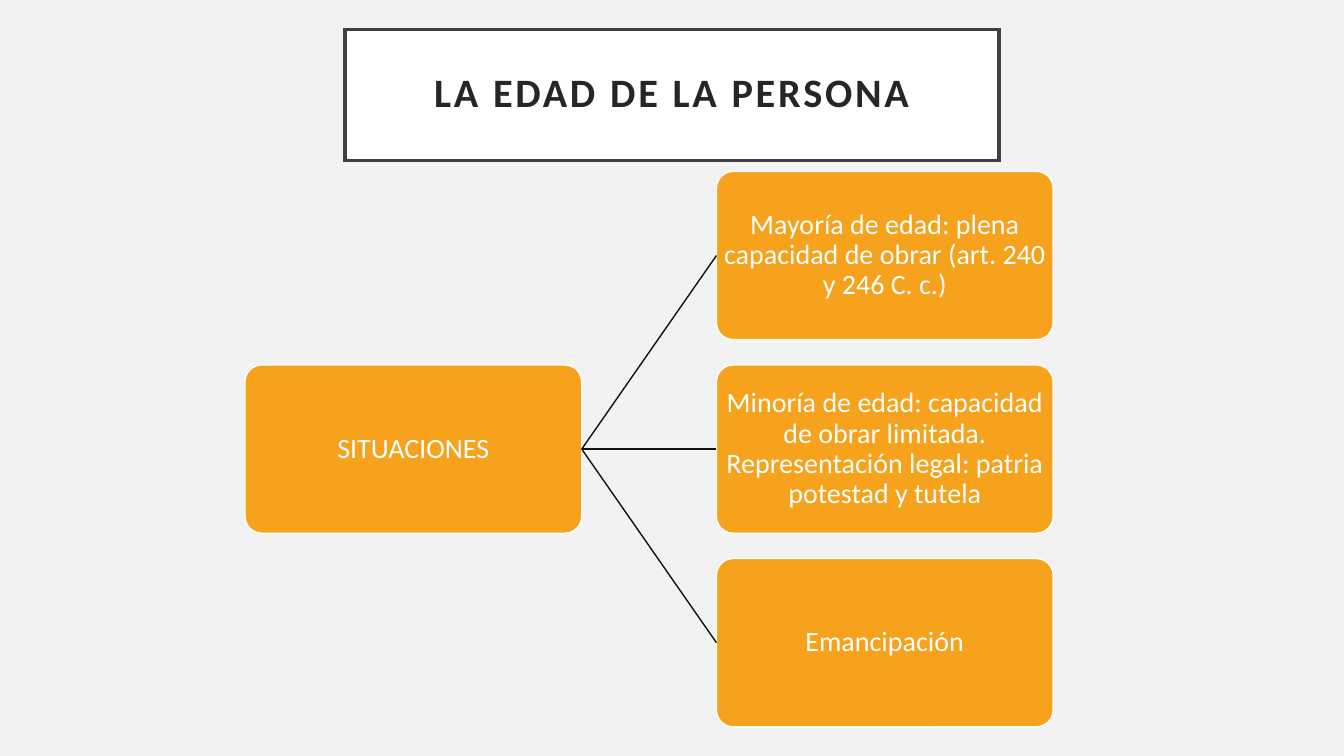
from dataclasses import dataclass

from lxml import etree
from pptx import Presentation
from pptx import util as u
from pptx.dml.color import RGBColor
from pptx.enum import shapes, text
from pptx.oxml.ns import qn


@dataclass(frozen=True)
class Theme:
    """Colours, font and type sizes of the slide."""
    back: str = "F2F2F2"
    paper: str = "FFFFFF"
    frame: str = "404040"
    heading: str = "262626"
    accent: str = "F6A21D"
    link: str = "10110D"
    font: str = "Calibri"
    title_size: float = 28.8
    body_size: float = 20


@dataclass(frozen=True)
class Grid:
    """Equal cells whose gaps are shares of the cell size."""
    left: float = 2.43
    top: float = 1.7
    width: float = 3.34
    height: float = 1.67
    col_gap: float = 0.4
    row_gap: float = 0.15

    def cell(self, col, row):
        """Return left, top, width and height of a cell."""
        x = self.left + col * self.width * (1 + self.col_gap)
        y = self.top + row * self.height * (1 + self.row_gap)
        return [u.Inches(v) for v in (x, y, self.width, self.height)]


def write(sp, content, *, font, size, color, inset, bold=False, tracking=0):
    """Put centred, formatted text in a shape."""
    tf = sp.text_frame
    tf.word_wrap = True
    tf.auto_size = text.MSO_AUTO_SIZE.NONE
    tf.vertical_anchor = text.MSO_ANCHOR.MIDDLE
    tf.margin_left = tf.margin_right = u.Inches(inset)
    tf.margin_top = tf.margin_bottom = u.Inches(inset)
    p = tf.paragraphs[0]
    p.alignment = text.PP_ALIGN.CENTER
    p.line_spacing = 0.9
    r = p.add_run()
    r.text = content
    r.font.name = font
    r.font.size = u.Pt(size)
    r.font.bold = bold
    r.font.color.rgb = RGBColor.from_string(color)
    if tracking:
        r.font._element.set("spc", str(tracking * 100))


def paint(sp, fill, line, width):
    """Give a shape a solid fill and an outline with sharp corners."""
    sp.fill.solid()
    sp.fill.fore_color.rgb = RGBColor.from_string(fill)
    sp.line.color.rgb = RGBColor.from_string(line)
    sp.line.width = u.Pt(width)
    ln = sp._element.spPr.find(qn("a:ln"))
    etree.SubElement(ln, qn("a:miter"), lim="800000")


class Deck:
    """Holds the style, the grid and the current slide."""

    def __init__(self, theme, grid):
        """Start a wide presentation with one title-only slide."""
        self.theme, self.grid = theme, grid
        self.prs = Presentation()
        self.prs.slide_width = u.Inches(13.33)
        self.prs.slide_height = u.Inches(7.5)
        self.slide = self.prs.slides.add_slide(self.prs.slide_layouts[5])
        fill = self.slide.background.fill
        fill.solid()
        fill.fore_color.rgb = RGBColor.from_string(theme.back)

    def title(self, content):
        """Fill the title placeholder and frame it."""
        t, sp = self.theme, self.slide.shapes.title
        sp.left, sp.top = u.Inches(3.42), u.Inches(0.29)
        sp.width, sp.height = u.Inches(6.49), u.Inches(1.3)
        paint(sp, t.paper, t.frame, 2.5)
        write(sp, content, font=t.font, size=t.title_size, color=t.heading,
              inset=0.2, bold=True, tracking=2)

    def box(self, content, col, row):
        """Add a rounded box in a grid cell."""
        t = self.theme
        sp = self.slide.shapes.add_shape(
            shapes.MSO_SHAPE.ROUNDED_RECTANGLE, *self.grid.cell(col, row))
        sp.adjustments[0] = 0.1
        sp.shadow.inherit = False
        paint(sp, t.accent, t.paper, 1)
        write(sp, content, font=t.font, size=t.body_size, color=t.paper,
              inset=0.01)
        return sp

    def link(self, start, end):
        """Join the right side of one box to the left side of another."""
        line = self.slide.shapes.add_connector(
            shapes.MSO_CONNECTOR.STRAIGHT, 0, 0, 0, 0)
        line.begin_connect(start, 3)
        line.end_connect(end, 1)
        line.line.color.rgb = RGBColor.from_string(self.theme.link)
        line.line.width = u.Pt(1)
        etree.SubElement(line._element.spPr, qn("a:effectLst"))


def main():
    """Build and save the slide."""
    deck = Deck(Theme(), Grid())
    deck.title("LA EDAD DE LA PERSONA")
    root = deck.box("SITUACIONES", 0, 1)
    situations = (
        "Mayoría de edad: plena capacidad de obrar (art. 240 y 246 C. c.)",
        "Minoría de edad: capacidad de obrar limitada. "
        "Representación legal: patria potestad y tutela",
        "Emancipación",
    )
    for row, situation in enumerate(situations):
        deck.link(root, deck.box(situation, 1, row))
    deck.prs.save("out.pptx")


if __name__ == "__main__":
    main()
